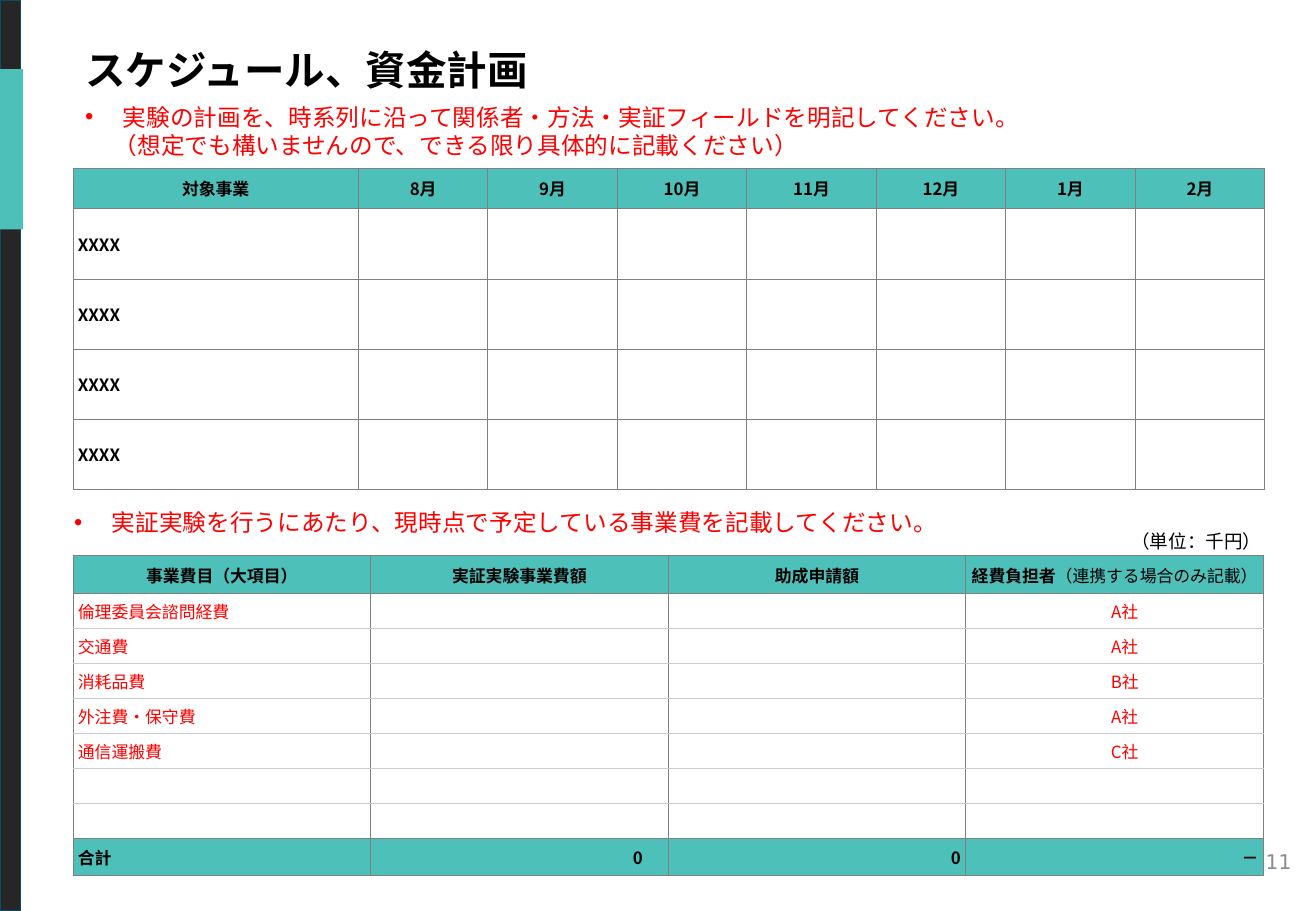
from lxml import etree
from pptx import Presentation
from pptx.dml import color
from pptx.enum import shapes, text
from pptx.oxml import ns
from pptx.util import Pt

TEAL, DARK, NAVY = "4EC0BA", "262626", "0C4C64"
RED, BLACK, GRAY, PALE, PAGE_GRAY = "FF0000", "000000", "808080", "CCCCCC", "8C8C8C"
SANS, CJK, PAGE_FONT = "Arial", "Noto Sans CJK JP", "DejaVu Sans"
LEFT, CENTER, RIGHT = text.PP_ALIGN.LEFT, text.PP_ALIGN.CENTER, text.PP_ALIGN.RIGHT

TITLE = "スケジュール、資金計画"
SCHEDULE_NOTES = [
    "実験の計画を、時系列に沿って関係者・方法・実証フィールドを明記してください。",
    "（想定でも構いませんので、できる限り具体的に記載ください）",
]
COST_NOTES = ["実証実験を行うにあたり、現時点で予定している事業費を記載してください。"]
SCHEDULE = [["対象事業", "8月", "9月", "10月", "11月", "12月", "1月", "2月"]]
SCHEDULE += [["XXXX"] + [""] * 7 for _ in range(4)]
UNIT = "（単位：千円）"
COST_HEADS = ["事業費目（大項目）", "実証実験事業費額", "助成申請額", "経費負担者"]
PAYER_HINT = "（連携する場合のみ記載）"
COSTS = [
    ("倫理委員会諮問経費", "A社"),
    ("交通費", "A社"),
    ("消耗品費", "B社"),
    ("外注費・保守費", "A社"),
    ("通信運搬費", "C社"),
    ("", ""),
    ("", ""),
]
TOTALS = ["合計", "0", "0", "－"]
PAGE = "11"

SCHEDULE_COLS = [169.2] + [76.75] * 7
SCHEDULE_ROWS = [24] + [41.6] * 4
COST_COLS = [176.4] * 4
COST_ROWS = [13.6, 22.6] + [20.8] * len(COSTS) + [21.6]


def rgb(value):
    return color.RGBColor.from_string(value)


def style(paragraph, size, hue, face=CJK, bold=False, align=LEFT):
    paragraph.alignment = align
    for run in paragraph.runs:
        font = run.font
        font.size, font.bold, font.name = Pt(size), bold, face
        font.color.rgb = rgb(hue)
        etree.SubElement(font._element, ns.qn("a:ea"), typeface=face)
    if not paragraph.runs:
        paragraph._p.get_or_add_endParaRPr().set("sz", str(size * 100))


def place(shape, left, top, width, height):
    shape.left, shape.top, shape.width, shape.height = map(Pt, (left, top, width, height))
    frame = shape.text_frame
    frame.word_wrap = True
    frame.auto_size = text.MSO_AUTO_SIZE.NONE
    frame.vertical_anchor = text.MSO_ANCHOR.MIDDLE
    return frame


def bar(top, width, height, fill, line=None):
    shape = slide.shapes.add_shape(
        shapes.MSO_SHAPE.RECTANGLE, Pt(0), Pt(top), Pt(width), Pt(height))
    shape.shadow.inherit = False
    shape.fill.solid()
    shape.fill.fore_color.rgb = rgb(fill)
    if line:
        shape.line.color.rgb = rgb(line)
        shape.line.width = Pt(1)
    else:
        shape.line.fill.background()


def write_notes(shape, notes, box):
    """Red notes: the first line has a bullet, the next ones only an indent."""
    frame = place(shape, *box)
    frame.text = "\n".join(notes)
    for index, paragraph in enumerate(frame.paragraphs):
        style(paragraph, 14, RED, SANS)
        paragraph.line_spacing, paragraph.space_before = Pt(16.6), Pt(0)
        props = paragraph._p.get_or_add_pPr()
        margin, indent = (17, 0) if index else (22.4, -22.4)
        props.set("marL", str(Pt(margin)))
        props.set("indent", str(Pt(indent)))
        if index:
            etree.SubElement(props, ns.qn("a:buNone"))
        else:
            etree.SubElement(props, ns.qn("a:buChar"), char="•")


def add_grid(top, cols, rows):
    table = slide.shapes.add_table(
        len(rows), len(cols), Pt(43.2), Pt(top), Pt(sum(cols)), Pt(sum(rows))).table
    table.first_row = table.horz_banding = False
    for column, width in zip(table.columns, cols):
        column.width = Pt(width)
    for row, height in zip(table.rows, rows):
        row.height = Pt(height)
    return table


def border(cell, left=GRAY, right=GRAY, top=GRAY, bottom=GRAY):
    props = cell._tc.get_or_add_tcPr()
    for index, (side, hue) in enumerate(zip("LRTB", (left, right, top, bottom))):
        width = Pt(0.75 if hue == PALE else 0.5)
        line = etree.Element(ns.qn("a:ln" + side), w=str(width))
        if hue:
            solid = etree.SubElement(line, ns.qn("a:solidFill"))
            etree.SubElement(solid, ns.qn("a:srgbClr"), val=hue)
        else:
            etree.SubElement(line, ns.qn("a:noFill"))
        props.insert(index, line)


def fill_cell(cell, words, insets, fill=None, size=10, hue=BLACK, bold=False, align=LEFT):
    cell.margin_left, cell.margin_top, cell.margin_right, cell.margin_bottom = map(Pt, insets)
    cell.vertical_anchor = text.MSO_ANCHOR.MIDDLE
    if fill:
        cell.fill.solid()
        cell.fill.fore_color.rgb = rgb(fill)
    else:
        cell.fill.background()
    paragraph = cell.text_frame.paragraphs[0]
    if words:
        paragraph.text = words
    style(paragraph, size, hue, bold=bold, align=align)
    return paragraph


prs = Presentation()
prs.slide_width, prs.slide_height = Pt(780), Pt(540)
slide = prs.slides.add_slide(prs.slide_layouts[3])  # title and two lists
title, schedule_notes, cost_notes = slide.placeholders

bar(0, 12.2, 540, DARK, NAVY)
bar(41, 13.7, 95, TEAL)

title_frame = place(title, 43.2, 23, 716, 36)
title_frame.text = TITLE
style(title_frame.paragraphs[0], 24, BLACK, SANS, bold=True)
write_notes(schedule_notes, SCHEDULE_NOTES, (43.2, 57, 705.6, 41))
write_notes(cost_notes, COST_NOTES, (36.7, 297.4, 685.4, 24.5))

schedule = add_grid(99.8, SCHEDULE_COLS, SCHEDULE_ROWS)
for r, line in enumerate(SCHEDULE):
    for c, words in enumerate(line):
        cell = schedule.cell(r, c)
        fill_cell(cell, words, (3, 3, 3, 3), None if r else TEAL, bold=True,
                  align=LEFT if r else CENTER)
        border(cell)

costs = add_grid(315.4, COST_COLS, COST_ROWS)
costs.cell(0, 0).merge(costs.cell(0, 3))
last = len(COST_ROWS) - 1
for c, (head, total) in enumerate(zip(COST_HEADS, TOTALS)):
    unit = fill_cell(costs.cell(0, c), "" if c else UNIT, (1, 0, 1, 0), size=11, align=RIGHT)
    unit.line_spacing = Pt(12.5)
    border(costs.cell(0, c), None, None, None)

    heading = fill_cell(costs.cell(1, c), head, (1, 1, 1, 0), TEAL, bold=True, align=CENTER)
    if c == 3:
        heading.add_run().text = PAYER_HINT
        style(heading, 10, BLACK, bold=True, align=CENTER)
        heading.runs[1].font.bold = False
    border(costs.cell(1, c))

    for r, (item, payer) in enumerate(COSTS, 2):
        cell = costs.cell(r, c)
        fill_cell(cell, (item, "", "", payer)[c], (15 if c == 3 else 3, 1, 3, 0),
                  hue=RED, align=CENTER if c == 3 else LEFT)
        border(cell, top=GRAY if r == 2 else PALE, bottom=GRAY if r == last - 1 else PALE)

    fill_cell(costs.cell(last, c), total, (3, 1, 15 if c == 1 else 3, 0), TEAL,
              bold=True, align=RIGHT if c else LEFT)
    border(costs.cell(last, c))

page_frame = place(slide.shapes.add_textbox(0, 0, 0, 0), 596.9, 496, 175.7, 28.8)
page_frame.text = PAGE
style(page_frame.paragraphs[0], 12, PAGE_GRAY, PAGE_FONT, align=RIGHT)

prs.save("out.pptx")
